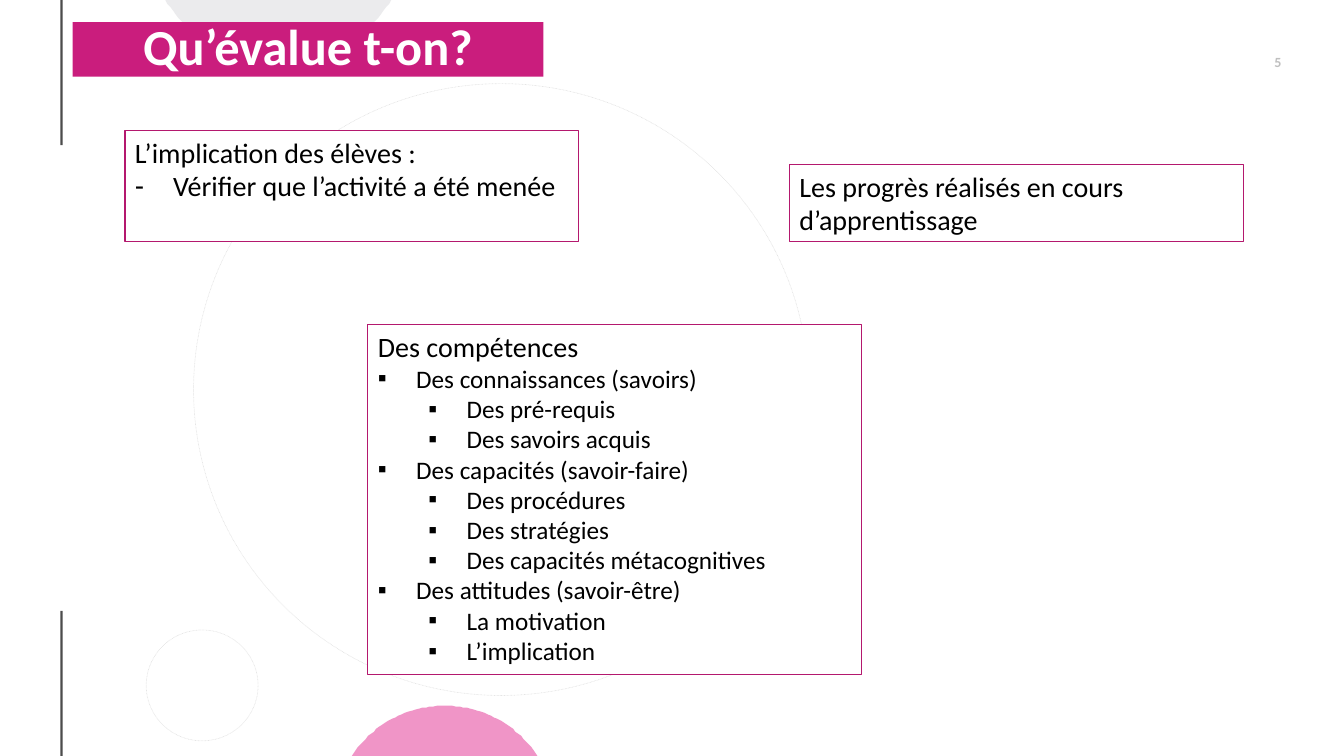
import math
from dataclasses import dataclass

import pptx
import pptx.dml.color
import pptx.enum.dml
import pptx.enum.shapes
import pptx.enum.text
import pptx.oxml.ns
import pptx.util
from lxml import etree

PX = 9144  # EMU per px, 100 px to the inch
ALIGN = pptx.enum.text.PP_ALIGN
ANCHOR = pptx.enum.text.MSO_ANCHOR
SHAPE = pptx.enum.shapes.MSO_SHAPE


@dataclass(frozen=True)
class Theme:
    font: str = "Calibri"
    ink: str = "000000"
    paper: str = "FFFFFF"
    banner: str = "CA1D7D"
    border: str = "B4186E"
    pink: str = "E32D91"
    grey: str = "D8D9DC"
    number: str = "BFBFBF"
    title_size: int = 36
    heading_size: int = 20
    item_size: int = 18
    number_size: int = 10


def add_xml(parent, tag, **attributes):
    return etree.SubElement(parent, pptx.oxml.ns.qn(tag), **attributes)


def paint(fill, color, opacity=100):
    fill.solid()
    fill.fore_color.rgb = pptx.dml.color.RGBColor.from_string(color)
    if opacity < 100:
        color_element = next(fill._xPr.iter(pptx.oxml.ns.qn("a:srgbClr")))
        add_xml(color_element, "a:alpha", val=str(opacity * 1000))


def set_bullet(paragraph, symbol, level):
    paragraph.level = level
    properties = paragraph._p.get_or_add_pPr()
    properties.set("marL", str((38 + 50 * level) * PX))
    properties.set("indent", str(-38 * PX))
    add_xml(properties, "a:buFont", typeface="Arial")
    add_xml(properties, "a:buChar", char=symbol)


class SlideBuilder:
    def __init__(self, slide, theme):
        self.slide = slide
        self.theme = theme

    def format_text(self, paragraph, size, color, bold=False):
        for run in paragraph.runs:
            run.font.name = self.theme.font
            run.font.size = pptx.util.Pt(size)
            run.font.bold = bold
            run.font.color.rgb = pptx.dml.color.RGBColor.from_string(color)

    def set_margins(self, text_frame, horizontal, vertical):
        text_frame.margin_left = text_frame.margin_right = horizontal * PX
        text_frame.margin_top = text_frame.margin_bottom = vertical * PX
        text_frame.word_wrap = True

    def title(self, text, left, top, width, height):
        """Format the title placeholder and bring it in front of the decoration."""
        shape = self.slide.shapes.title
        shape.left, shape.top = left * PX, top * PX
        shape.width, shape.height = width * PX, height * PX
        paint(shape.fill, self.theme.banner)
        text_frame = shape.text_frame
        text_frame.text = text
        text_frame.auto_size = pptx.enum.text.MSO_AUTO_SIZE.NONE
        text_frame.vertical_anchor = ANCHOR.MIDDLE
        self.set_margins(text_frame, 10, 0)
        paragraph = text_frame.paragraphs[0]
        paragraph.alignment = ALIGN.CENTER
        paragraph.line_spacing = 0.9
        self.format_text(paragraph, self.theme.title_size, self.theme.paper, bold=True)
        self.slide.shapes._spTree.append(shape._element)

    def slide_number(self, text, left, top, width, height):
        box = self.slide.shapes.add_textbox(left * PX, top * PX, width * PX, height * PX)
        box.text_frame.text = text
        box.text_frame.vertical_anchor = ANCHOR.MIDDLE
        self.set_margins(box.text_frame, 0, 0)
        paragraph = box.text_frame.paragraphs[0]
        paragraph.alignment = ALIGN.RIGHT
        self.format_text(paragraph, self.theme.number_size, self.theme.number, bold=True)

    def vertical_line(self, x, top, bottom):
        line = self.slide.shapes.add_connector(
            pptx.enum.shapes.MSO_CONNECTOR.STRAIGHT, x * PX, top * PX, x * PX, bottom * PX)
        line.line.width = pptx.util.Pt(1.5)
        paint(line.line.fill, self.theme.ink, 70)
        add_xml(line._element.spPr, "a:effectLst")

    def dotted_circle(self, left, top, width, height):
        circle = self.slide.shapes.add_shape(
            SHAPE.OVAL, left * PX, top * PX, width * PX, height * PX)
        circle.shadow.inherit = False
        circle.fill.background()
        circle.line.width = pptx.util.Pt(0.5)
        paint(circle.line.fill, self.theme.ink, 10)
        circle.line.dash_style = pptx.enum.dml.MSO_LINE.ROUND_DOT

    def cut_circle(self, center_x, edge_y, half_width, depth, color):
        """Draw the cap of a circle cut by a slide edge; a negative depth rises."""
        radius = (half_width ** 2 + depth ** 2) / (2 * abs(depth))
        center_y = edge_y + depth - math.copysign(radius, depth)
        reach = math.asin(half_width / radius)
        if abs(depth) > radius:
            reach = math.pi - reach
        steps = 60
        angles = [reach * (2 * step / steps - 1) for step in range(steps + 1)]
        points = [(center_x + radius * math.sin(angle),
                   center_y + math.copysign(radius, depth) * math.cos(angle))
                  for angle in angles]
        builder = self.slide.shapes.build_freeform(*points[0], scale=PX)
        builder.add_line_segments(points[1:], close=True)
        cap = builder.convert_to_shape()
        cap.shadow.inherit = False
        paint(cap.fill, color, 50)
        cap.line.fill.background()

    def text_card(self, left, top, width, height, heading, items=(), symbol="▪", item_size=None):
        """Draw a framed box with a heading and (level, text) bullet items."""
        card = self.slide.shapes.add_shape(
            SHAPE.RECTANGLE, left * PX, top * PX, width * PX, height * PX)
        card.shadow.inherit = False
        paint(card.fill, self.theme.paper)
        paint(card.line.fill, self.theme.border)
        card.line.width = pptx.util.Pt(0.75)
        text_frame = card.text_frame
        text_frame.vertical_anchor = ANCHOR.TOP
        self.set_margins(text_frame, 10, 5)
        text_frame.text = heading
        self.format_text(text_frame.paragraphs[0], self.theme.heading_size, self.theme.ink)
        for level, text in items:
            paragraph = text_frame.add_paragraph()
            paragraph.text = text
            set_bullet(paragraph, symbol, level)
            self.format_text(paragraph, item_size or self.theme.item_size, self.theme.ink)
        for paragraph in text_frame.paragraphs:
            paragraph.alignment = ALIGN.LEFT


SKILLS = [
    (0, "Des connaissances (savoirs)"),
    (1, "Des pré-requis"),
    (1, "Des savoirs acquis"),
    (0, "Des capacités (savoir-faire)"),
    (1, "Des procédures"),
    (1, "Des stratégies"),
    (1, "Des capacités métacognitives"),
    (0, "Des attitudes (savoir-être)"),
    (1, "La motivation"),
    (1, "L’implication"),
]


def main():
    presentation = pptx.Presentation()
    presentation.slide_width = 1333 * PX
    presentation.slide_height = 750 * PX
    theme = Theme()
    builder = SlideBuilder(presentation.slides.add_slide(presentation.slide_layouts[5]), theme)

    builder.vertical_line(61, 606, 750)
    builder.vertical_line(61, 0, 144)
    builder.dotted_circle(192, 83, 610, 607)
    builder.cut_circle(441, 750, 92, -50, theme.pink)
    builder.cut_circle(276, 0, 112, 62, theme.grey)
    builder.dotted_circle(145, 625, 111, 110)

    builder.slide_number("5", 1194, 48, 77, 27)
    builder.title("Qu’évalue t-on?", 72, 22, 467, 54)
    builder.text_card(783, 163, 450, 77, "Les progrès réalisés en cours d’apprentissage")
    builder.text_card(365, 322, 490, 347, "Des compétences", SKILLS)
    builder.text_card(124, 129, 450, 111, "L’implication des élèves :",
                      [(0, "Vérifier que l’activité a été menée")],
                      symbol="-", item_size=theme.heading_size)
    presentation.save("out.pptx")


if __name__ == "__main__":
    main()
